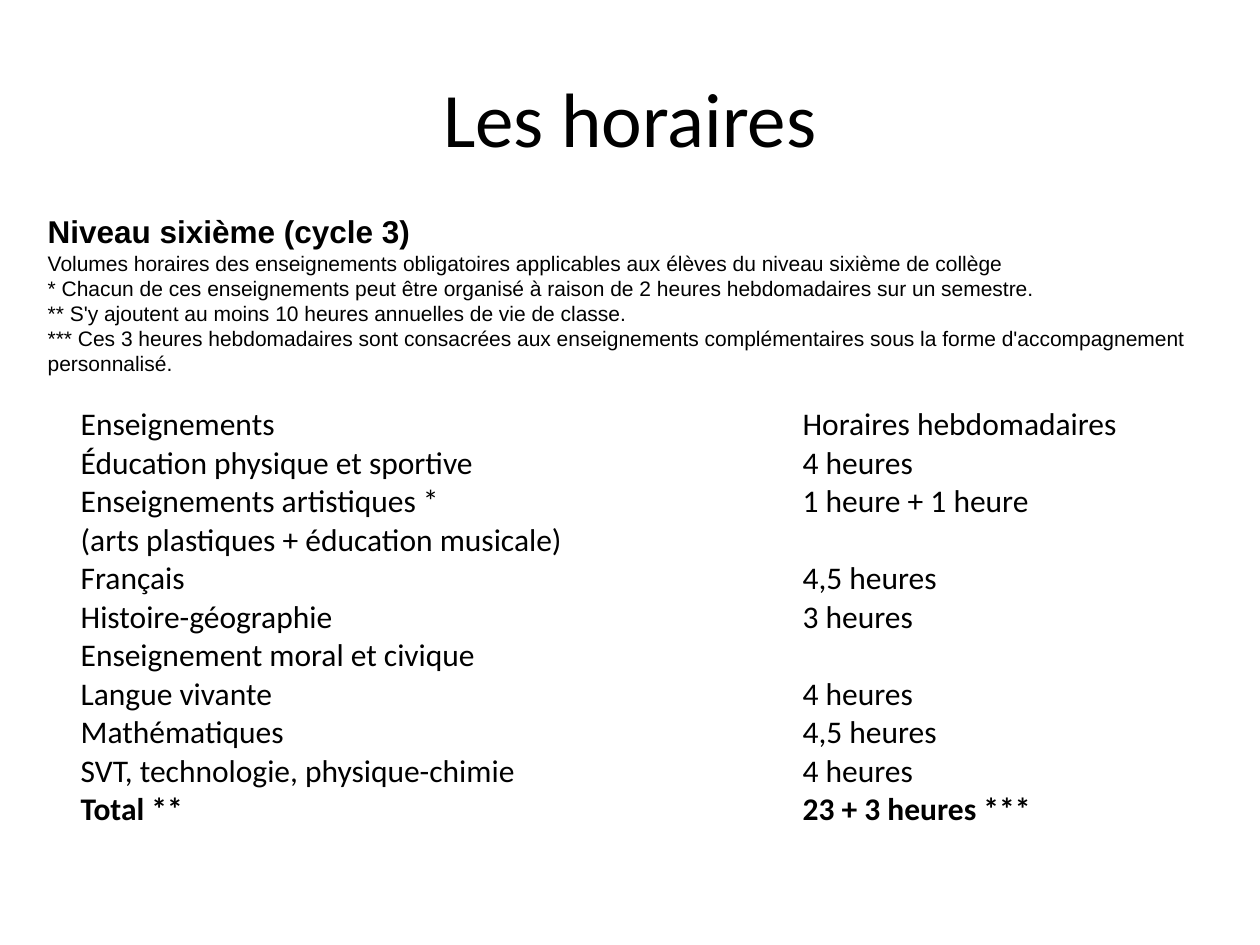
from pptx import Presentation
from pptx import util as u
from pptx.dml.color import RGBColor
from pptx.enum import text

BLACK = RGBColor(0, 0, 0)
WIDTH, HEIGHT = 10, 7.5
LINE_HEIGHT = 0.3
COLUMNS = (5.73, 3.27)

TITLE = "Les horaires"
HEADING = "Niveau sixième (cycle 3)"
NOTES = [
    "Volumes horaires des enseignements obligatoires applicables aux élèves du niveau sixième de collège",
    "* Chacun de ces enseignements peut être organisé à raison de 2 heures hebdomadaires sur un semestre.",
    "** S'y ajoutent au moins 10 heures annuelles de vie de classe.",
    "*** Ces 3 heures hebdomadaires sont consacrées aux enseignements complémentaires "
    "sous la forme d'accompagnement personnalisé.",
]
# One row per subject group; a line break separates paragraphs
TIMETABLE = [
    ("Enseignements", "Horaires hebdomadaires"),
    ("Éducation physique et sportive", "4 heures"),
    ("Enseignements artistiques *\n(arts plastiques + éducation musicale)", "1 heure + 1 heure"),
    ("Français", "4,5 heures"),
    ("Histoire-géographie\nEnseignement moral et civique", "3 heures"),
    ("Langue vivante", "4 heures"),
    ("Mathématiques", "4,5 heures"),
    ("SVT, technologie, physique-chimie", "4 heures"),
    ("Total **", "23 + 3 heures ***"),
]


def inches(*lengths):
    return [u.Inches(length) for length in lengths]


def style(para, size, name, bold=False):
    for span in para.runs:
        for key, value in {"size": u.Pt(size), "name": name, "bold": bold}.items():
            setattr(span.font, key, value)
        span.font.color.rgb = BLACK


deck = Presentation()
deck.slide_width, deck.slide_height = inches(WIDTH, HEIGHT)
page = deck.slides.add_slide(deck.slide_layouts[5])

# Title
title = page.shapes.title
title.left, title.top, title.width, title.height = inches(0.5, 0.3, 9, 1.25)
title.text_frame.text = TITLE
title.text_frame.vertical_anchor = text.MSO_ANCHOR.MIDDLE
title.text_frame.paragraphs[0].alignment = text.PP_ALIGN.CENTER
style(title.text_frame.paragraphs[0], 44, "Calibri")

# Timetable
line_count = sum(row[0].count("\n") + 1 for row in TIMETABLE)
frame = page.shapes.add_table(
    len(TIMETABLE), len(COLUMNS), *inches(0.64, 3.22, sum(COLUMNS), line_count * LINE_HEIGHT))
table = frame.table
table.first_row = table.horz_banding = False
for column, width in zip(table.columns, COLUMNS):
    column.width = u.Inches(width)
for row, entries in zip(table.rows, TIMETABLE):
    row.height = u.Inches(LINE_HEIGHT * (entries[0].count("\n") + 1))
    for cell, words in zip(row.cells, entries):
        cell.fill.background()
        for side in ("left", "right", "top", "bottom"):
            setattr(cell, f"margin_{side}", 0)
        cell.text = words
        for para in cell.text_frame.paragraphs:
            style(para, 18, "Calibri", bold=entries is TIMETABLE[-1])
# Plain table style without grid lines
frame._element.find(".//{*}tableStyleId").text = "{2D5ABB26-0587-4C30-8999-92F81FD0307C}"

# Heading and notes
box = page.shapes.add_textbox(*inches(0.28, 1.63, 9.45, 1.41)).text_frame
box.word_wrap = True
box.auto_size = text.MSO_AUTO_SIZE.SHAPE_TO_FIT_TEXT
box.vertical_anchor = text.MSO_ANCHOR.MIDDLE
box.text = "\n".join([HEADING, *NOTES])
heading, *notes = box.paragraphs
style(heading, 18, "Arial", bold=True)
for para in notes:
    style(para, 12, "Arial")

deck.save("out.pptx")
